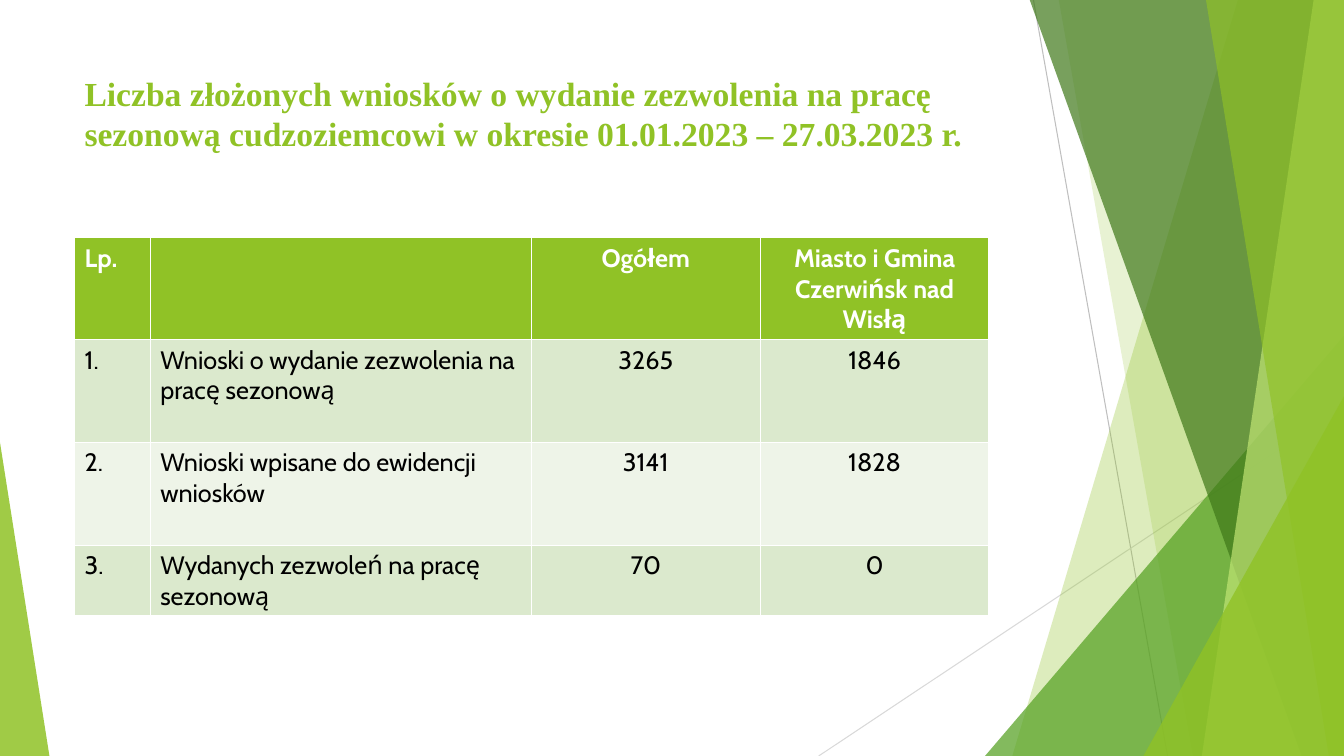
from lxml import etree
from pptx import Presentation, util as u
from pptx.dml.color import RGBColor
from pptx.enum import shapes, text
from pptx.oxml import ns

W, H = 13.33, 7.5
HUES = {"lime": "90C226", "leaf": "54A021", "moss": "3F7819", "pale": "C0E474",
        "gray": "BFBFBF", "mist": "D9D9D9", "white": "FFFFFF", "black": "000000",
        "odd": "DBE9CD", "even": "EEF4E8"}
TITLE = {"size": u.Pt(24), "name": "Times New Roman", "bold": True}
HEAD = {"size": u.Pt(18), "name": "Cabin", "bold": True}
BODY = {**HEAD, "bold": False}

# Ribbons: left top, right top, right bottom, left bottom; hue, opacity
BANDS = [(12.28, 10.04, "lime", 30), (10.5, 11.83, "lime", 20),
         (10.21, 12.91, "moss", 70), (13.03, 11.92, "pale", 70),
         (11.96, 13.18, "lime", 65)]
# Wedges: left, top, width, apex, hue, opacity
WEDGES = [(9.77, 3.33, 3.56, 1, "leaf", 72), (11.34, 3.93, 1.99, 1, "lime", 80),
          (0, 4.39, 0.49, 0, "lime", 85)]
RAYS = [(10.25, 0, 11.58, H, "gray"), (W, 4.03, 8.12, H, "mist")]

COLS = [0.75, 3.78, 2.27, 2.27]
ROWS = [1.01, 1.02, 1.02, 0.7]
DATA = [["Lp.", "", "Ogółem", "Miasto i Gmina Czerwińsk nad Wisłą"],
        ["1.", "Wnioski o wydanie zezwolenia na pracę sezonową", "3265", "1846"],
        ["2.", "Wnioski wpisane do ewidencji wniosków", "3141", "1828"],
        ["3.", "Wydanych zezwoleń na pracę sezonową", "70", "0"]]


def rgb(hue):
    return RGBColor.from_string(HUES[hue])


def style(font, form, hue):
    for key, val in form.items():
        setattr(font, key, val)
    font.color.rgb = rgb(hue)


def paint(shape, hue, alpha):
    shape.shadow.inherit = False
    shape.line.fill.background()
    shape.fill.solid()
    shape.fill.fore_color.rgb = rgb(hue)
    clr = shape.fill._xPr.find(".//" + ns.qn("a:srgbClr"))
    etree.SubElement(clr, ns.qn("a:alpha")).set("val", str(alpha * 1000))


def ray(slide, x1, y1, x2, y2, hue):
    line = slide.shapes.add_connector(
        shapes.MSO_CONNECTOR.STRAIGHT, *map(u.Inches, (x1, y1, x2, y2)))
    line.line.color.rgb = rgb(hue)
    line.line.width = u.Pt(0.75)
    etree.SubElement(line._element.spPr, ns.qn("a:effectLst"))


def band(slide, top, foot, hue, alpha):
    pts = [tuple(map(u.Inches, p))
           for p in ((top, -0.01), (W, -0.01), (W, H), (foot, H))]
    pen = slide.shapes.build_freeform(*pts[0])
    pen.add_line_segments(pts[1:], close=True)
    paint(pen.convert_to_shape(), hue, alpha)


def wedge(slide, x, y, w, apex, hue, alpha):
    shape = slide.shapes.add_shape(
        shapes.MSO_SHAPE.ISOSCELES_TRIANGLE, *map(u.Inches, (x, y, w, H - y)))
    shape.adjustments[0] = apex
    paint(shape, hue, alpha)


def decor(slide):
    for item in RAYS:
        ray(slide, *item)
    for item in BANDS[:2]:
        band(slide, *item)
    wedge(slide, *WEDGES[0])
    for item in BANDS[2:]:
        band(slide, *item)
    for item in WEDGES[1:]:
        wedge(slide, *item)


def title(slide, x, y, w, h):
    frame = slide.shapes.add_textbox(*map(u.Inches, (x, y, w, h))).text_frame
    frame.word_wrap = True
    frame.vertical_anchor = text.MSO_ANCHOR.TOP
    run = frame.paragraphs[0].add_run()
    run.text = ("Liczba złożonych wniosków o wydanie zezwolenia na pracę "
                "sezonową cudzoziemcowi w okresie 01.01.2023 – 27.03.2023 r.")
    style(run.font, TITLE, "lime")


def grid(slide, x, y):
    # The default table style supplies the white rules
    box = map(u.Inches, (x, y, sum(COLS), sum(ROWS)))
    table = slide.shapes.add_table(len(ROWS), len(COLS), *box).table
    for col, w in zip(table.columns, COLS):
        col.width = u.Inches(w)
    for i, (row, h) in enumerate(zip(table.rows, ROWS)):
        row.height = u.Inches(h)
        back = "lime" if i == 0 else "odd" if i % 2 else "even"
        form, ink = (BODY, "black") if i else (HEAD, "white")
        for j, cell in enumerate(row.cells):
            cell.fill.solid()
            cell.fill.fore_color.rgb = rgb(back)
            cell.text = DATA[i][j]
            para = cell.text_frame.paragraphs[0]
            para.alignment = text.PP_ALIGN.CENTER if j > 1 else text.PP_ALIGN.LEFT
            for run in para.runs:
                style(run.font, form, ink)


def main():
    deck = Presentation()
    deck.slide_width, deck.slide_height = u.Inches(W), u.Inches(H)
    slide = deck.slides.add_slide(deck.slide_layouts[6])
    decor(slide)
    title(slide, 0.74, 0.67, 9.4, 1.44)
    grid(slide, 0.74, 2.36)
    deck.save("out.pptx")


if __name__ == "__main__":
    main()
